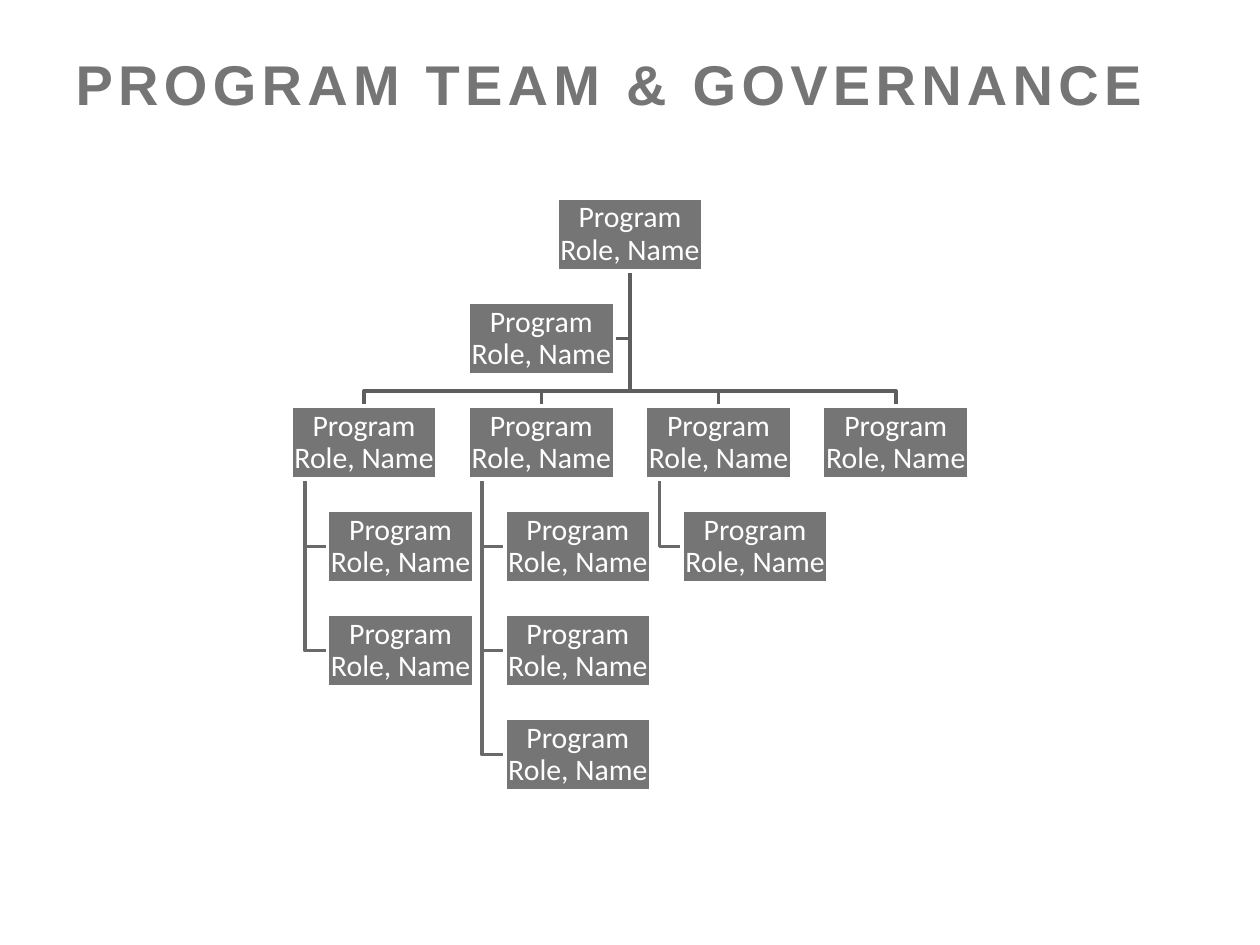
from pptx import Presentation
from pptx.dml.color import RGBColor as Rgb
from pptx.enum.shapes import MSO_SHAPE as Kind
from pptx.enum.text import MSO_ANCHOR as Anchor, MSO_AUTO_SIZE as Fit, PP_ALIGN as Align
from pptx.util import Inches, Pt

GRAY, WHITE = "757575", "FFFFFF"
TRUNK, TWIG = "5E5E5E", "6A6A6A"
ROLE = "Program Role, Name"
TEAMS = [2, 3, 1, 0]
WIDE, HIGH = 1.16, 0.58
INDENT, STEM = 0.29, 0.11


def color(code):
    return Rgb.from_string(code)


def apply(item, values):
    for name, value in values.items():
        setattr(item, name, value)


def write(frame, text, look, font, code, align):
    apply(frame, look)
    para = frame.paragraphs[0]
    para.alignment = align
    run = para.add_run()
    run.text = text
    apply(run.font, font)
    run.font.color.rgb = color(code)
    return para, run


def stroke(shape, code):
    shape.shadow.inherit = False
    shape.line.color.rgb = color(code)
    shape.line.width = Pt(2)


def add_title(slide, box):
    title = slide.shapes.title
    apply(title, dict(zip(("left", "top", "width", "height"), map(Inches, box))))
    look = dict(vertical_anchor=Anchor.TOP, auto_size=Fit.NONE, word_wrap=True,
                margin_top=Inches(0.08))
    font = dict(name="Arial", size=Pt(32), bold=True)
    _, run = write(title.text_frame, "PROGRAM TEAM & GOVERNANCE",
                   look, font, GRAY, Align.LEFT)
    run._r.get_or_add_rPr().set("spc", "300")


def add_wire(slide, points, code):
    start, *rest = [(Inches(x), Inches(y)) for x, y in points]
    pen = slide.shapes.build_freeform(*start)
    pen.add_line_segments(rest, close=False)
    wire = pen.convert_to_shape()
    wire.fill.background()
    stroke(wire, code)


def add_card(slide, x, y):
    card = slide.shapes.add_shape(Kind.RECTANGLE, *map(Inches, (x, y, WIDE, HIGH)))
    card.fill.solid()
    card.fill.fore_color.rgb = color(GRAY)
    stroke(card, WHITE)
    look = dict(vertical_anchor=Anchor.MIDDLE, word_wrap=True)
    for side in ("left", "top", "right", "bottom"):
        look[f"margin_{side}"] = Inches(0.01)
    font = dict(name="Calibri", size=Pt(17))
    para, _ = write(card.text_frame, ROLE, look, font, WHITE, Align.CENTER)
    para.line_spacing = 0.9


def add_chart(slide, box):
    left, top, width, height = box
    pitch = (width - WIDE) / (len(TEAMS) - 1)
    step = (height - HIGH) / (max(TEAMS) + 2)
    mid, base = left + width / 2, top + HIGH
    lead = top + 2 * step
    bus = lead - 0.12
    aide = left + pitch, top + step
    cards = [(mid - WIDE / 2, top), aide]

    level = aide[1] + HIGH / 2
    add_wire(slide, [(mid, base), (mid, level), (aide[0] + WIDE, level)], TRUNK)
    for col, count in enumerate(TEAMS):
        x = left + col * pitch
        hub = x + WIDE / 2
        cards.append((x, lead))
        add_wire(slide, [(mid, base), (mid, bus), (hub, bus), (hub, lead)], TRUNK)
        for row in range(1, count + 1):
            y = lead + row * step
            level = y + HIGH / 2
            stem = x + STEM
            cards.append((x + INDENT, y))
            add_wire(slide, [(stem, lead + HIGH), (stem, level),
                             (x + INDENT, level)], TWIG)
    for x, y in cards:
        add_card(slide, x, y)


def main():
    deck = Presentation()
    deck.slide_width, deck.slide_height = Inches(10), Inches(7.5)
    slide = deck.slides.add_slide(deck.slide_layouts[5])
    add_title(slide, (0.5, 0.31, 9, 1.25))
    add_chart(slide, (2.31, 1.57, 5.38, 4.71))
    deck.save("out.pptx")


if __name__ == "__main__":
    main()
